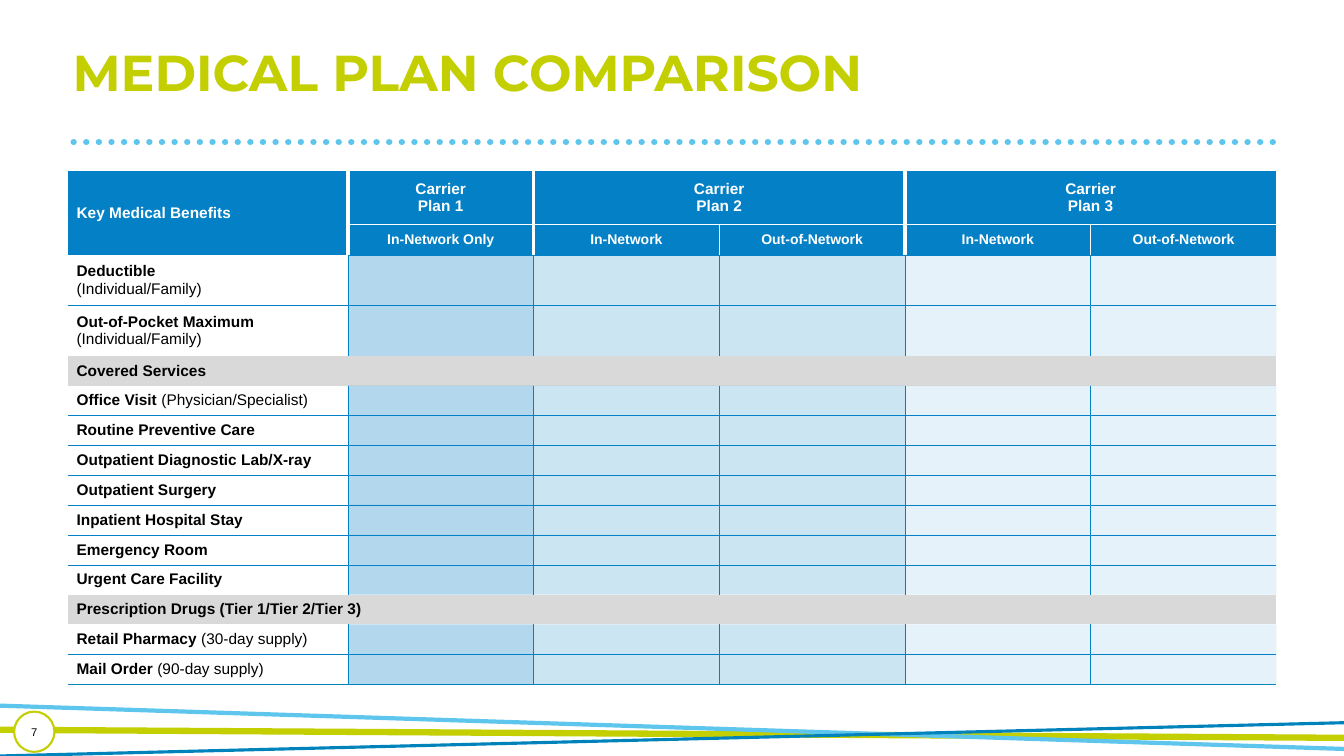
from lxml import etree
from pptx import Presentation
from pptx.dml.color import RGBColor
from pptx.enum.dml import MSO_LINE
from pptx.enum.shapes import MSO_CONNECTOR, MSO_SHAPE
from pptx.enum.text import MSO_ANCHOR, PP_ALIGN
from pptx.oxml.ns import qn
from pptx.util import Inches, Pt

CENTER, LEFT = PP_ALIGN.CENTER, PP_ALIGN.LEFT
TOP, MIDDLE = MSO_ANCHOR.TOP, MSO_ANCHOR.MIDDLE
STRAIGHT, OVAL, DOTS = MSO_CONNECTOR.STRAIGHT, MSO_SHAPE.OVAL, MSO_LINE.ROUND_DOT

COLORS = {
    "lime": "C3CF00", "sky": "5EC5ED", "ocean": "0083BB", "blue": "0481C6",
    "gray": "D9D9D9", "white": "FFFFFF", "black": "000000",
}
TITLE = "MEDICAL PLAN COMPARISON"
PAGE = "7"
CORNER = "Key Medical Benefits"
PLANS = [
    ("Plan 1", ["In-Network Only"], 30),
    ("Plan 2", ["In-Network", "Out-of-Network"], 20),
    ("Plan 3", ["In-Network", "Out-of-Network"], 10),
]
BENEFITS = [
    [[("Deductible", True)], [("(Individual/Family)", False)]],
    [[("Out-of-Pocket Maximum", True)], [("(Individual/Family)", False)]],
    [[("Covered Services", True)]],
    [[("Office Visit ", True), ("(Physician/Specialist)", False)]],
    [[("Routine Preventive Care", True)]],
    [[("Outpatient Diagnostic Lab/X-ray", True)]],
    [[("Outpatient Surgery", True)]],
    [[("Inpatient Hospital Stay", True)]],
    [[("Emergency Room", True)]],
    [[("Urgent Care Facility", True)]],
    [[("Prescription Drugs (Tier 1/Tier 2/Tier 3)", True)]],
    [[("Retail Pharmacy ", True), ("(30-day supply)", False)]],
    [[("Mail Order ", True), ("(90-day supply)", False)]],
]
SECTIONS = {"Covered Services", "Prescription Drugs (Tier 1/Tier 2/Tier 3)"}
WAVES = [
    ((-0.01, 7.24), (13.33, 7.32), "lime", 4.5),
    ((13.33, 7.43), (-0.01, 7), "sky", 3),
    ((-0.01, 7.5), (13.33, 7.17), "ocean", 2.25),
]
TABLE_X, TABLE_Y, TABLE_W, TABLE_H = 0.67, 1.7, 11.99, 5.09
LABEL_W = 2.78
HEADS = [0.52, 0.31]
TALL = 0.5


def rgb(name):
    return RGBColor.from_string(COLORS[name])


def add_line(start, end, color, width):
    line = s.shapes.add_connector(STRAIGHT, *map(Inches, start + end))
    line.line.color.rgb = rgb(color)
    line.line.width = Pt(width)
    etree.SubElement(line._element.spPr, qn("a:effectLst"))
    return line


def write(tf, paragraphs, size, color, align=LEFT, font="Arial"):
    for i, runs in enumerate(paragraphs):
        p = tf.paragraphs[0] if i == 0 else tf.add_paragraph()
        p.alignment = align
        for text, bold in runs:
            r = p.add_run()
            r.text = text
            r.font.name, r.font.size, r.font.bold = font, Pt(size), bold
            r.font.color.rgb = rgb(color)


def set_border(cell, side, edge):
    ln = etree.SubElement(cell._tc.get_or_add_tcPr(), qn("a:ln" + side))
    if edge is None:
        etree.SubElement(ln, qn("a:noFill"))
        return
    color, width = edge
    ln.set("w", str(Pt(width)))
    fill = etree.SubElement(ln, qn("a:solidFill"))
    etree.SubElement(fill, qn("a:srgbClr"), val=COLORS[color])


def vertical_edge(row, x):
    if x in (0, n_cols) or row in section_rows:
        return None
    if row >= 2:
        return "blue", 0.25
    if x in plan_starts:
        return "white", 3
    return ("white", 0.25) if row == 1 else None


def horizontal_edge(y, col):
    if y == 0 or y in section_rows or y - 1 in section_rows:
        return None
    if y == n_rows:
        return "ocean", 0.5
    if y == 1:
        return ("white", 0.25) if col else None
    return "blue", 0.25


def style_cell(row, col):
    cell = table.cell(row, col)
    cell.vertical_anchor = MIDDLE
    cell.margin_left = cell.margin_right = Inches(0.09)
    cell.margin_top = cell.margin_bottom = Inches(0.05 if row < 2 else 0.04)
    set_border(cell, "L", vertical_edge(row, col))
    set_border(cell, "R", vertical_edge(row, col + 1))
    set_border(cell, "T", horizontal_edge(row, col))
    set_border(cell, "B", horizontal_edge(row + 1, col))
    fill = "blue" if row < 2 else "gray" if row in section_rows else "blue" if col else "white"
    cell.fill.solid()
    cell.fill.fore_color.rgb = rgb(fill)
    if row >= 2 and fill == "blue":
        clr = cell._tc.tcPr.find(qn("a:solidFill"))[0]
        etree.SubElement(clr, qn("a:alpha"), val=str(tints[col - 1] * 1000))
    for p in cell.text_frame.paragraphs:
        if not p.runs:
            etree.SubElement(p._p, qn("a:endParaRPr"), sz="1100")


prs = Presentation()
prs.slide_width, prs.slide_height = Inches(13.33), Inches(7.5)
s = prs.slides.add_slide(prs.slide_layouts[5])

title = s.shapes.title
title.left, title.top, title.width, title.height = map(Inches, (0.62, 0.43, 12.03, 0.79))
title.text_frame.vertical_anchor = TOP
title.text_frame.word_wrap = True
write(title.text_frame, [[(TITLE, True)]], 36, "lime", font="Montserrat")
title.text_frame.paragraphs[0].line_spacing = 0.9

rule = add_line((0.73, 1.41), (12.66, 1.41), "sky", 4.5)
rule.line.dash_style = DOTS
rule.line._ln.set("cap", "rnd")
for wave in WAVES:
    add_line(*wave)

tints = [tint for _, networks, tint in PLANS for _ in networks]
n_cols, n_rows = 1 + len(tints), len(HEADS) + len(BENEFITS)
section_rows = {i for i, lines in enumerate(BENEFITS, 2) if lines[0][0][0] in SECTIONS}
plan_starts = set()

frame = s.shapes.add_table(n_rows, n_cols, *map(Inches, (TABLE_X, TABLE_Y, TABLE_W, TABLE_H)))
table = frame.table
table.first_row = table.horz_banding = False
for col in range(n_cols):
    table.columns[col].width = Inches((TABLE_W - LABEL_W) / len(tints) if col else LABEL_W)
n_tall = sum(len(lines) == 2 for lines in BENEFITS)
short = (TABLE_H - sum(HEADS) - n_tall * TALL) / (len(BENEFITS) - n_tall)
heights = HEADS + [TALL if len(lines) == 2 else short for lines in BENEFITS]
for row, height in zip(table.rows, heights):
    row.height = Inches(height)

write(table.cell(0, 0).text_frame, [[(CORNER, True)]], 11, "white")
table.cell(0, 0).merge(table.cell(1, 0))
col = 1
for plan, networks, _ in PLANS:
    plan_starts.add(col)
    head = table.cell(0, col)
    write(head.text_frame, [[("Carrier", True)], [(plan, True)]], 11, "white", CENTER)
    if len(networks) > 1:
        head.merge(table.cell(0, col + len(networks) - 1))
    for network in networks:
        write(table.cell(1, col).text_frame, [[(network, True)]], 10, "white", CENTER)
        col += 1
for row, lines in enumerate(BENEFITS, 2):
    write(table.cell(row, 0).text_frame, lines, 11, "black")
    if row in section_rows:
        table.cell(row, 0).merge(table.cell(row, n_cols - 1))
for row in range(n_rows):
    for col in range(n_cols):
        style_cell(row, col)

badge = s.shapes.add_shape(OVAL, *map(Inches, (0.14, 7.06, 0.4, 0.4)))
badge.shadow.inherit = False
badge.fill.solid()
badge.fill.fore_color.rgb = rgb("white")
badge.line.color.rgb = rgb("lime")
badge.line.width = Pt(1.5)
tf = badge.text_frame
tf.margin_left = tf.margin_right = tf.margin_top = tf.margin_bottom = 0
tf.vertical_anchor = MIDDLE
write(tf, [[(PAGE, False)]], 8, "black", CENTER)

prs.save("out.pptx")
